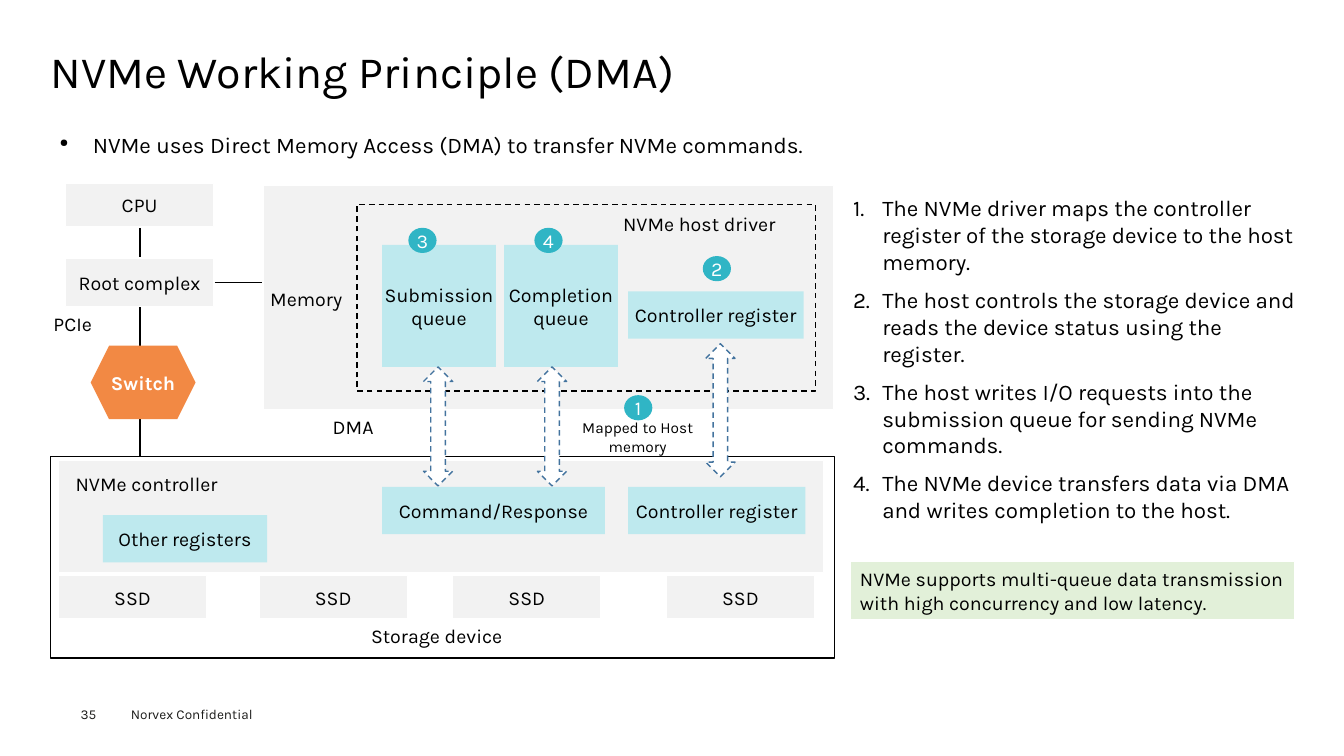
import pptx
import pptx.util
import pptx.dml.color
import pptx.enum.dml
import pptx.enum.shapes
import pptx.enum.text
import pptx.oxml.ns
from lxml import etree

Inches, Pt = pptx.util.Inches, pptx.util.Pt
Kind = pptx.enum.shapes.MSO_SHAPE
Align = pptx.enum.text.PP_ALIGN
Anchor = pptx.enum.text.MSO_ANCHOR
qn = pptx.oxml.ns.qn

COLORS = {
    "black": "000000", "white": "FFFFFF", "gray": "F2F2F2", "aqua": "BEE9EE",
    "teal": "30B5C5", "orange": "F28944", "green": "E2F0D9",
    "blue": "43739E", "ink": "1D1D1B",
}


def tint(name):
    return pptx.dml.color.RGBColor.from_string(COLORS[name])


class Board:
    """Holds the style and the current slide."""
    font = "Karla"
    size = 14

    def __init__(self, slide):
        self.shapes = slide.shapes

    def put(self, frame, lines, size=None, color="black", bold=False,
            align=Align.LEFT, anchor=Anchor.TOP, inset=(0, 0), wrap=True,
            space=None, gap=0, bullet=None, indent=0):
        frame.word_wrap = wrap
        frame.vertical_anchor = anchor
        frame.margin_left = frame.margin_right = Inches(inset[0])
        frame.margin_top = frame.margin_bottom = Inches(inset[1])
        for i, line in enumerate(lines):
            para = frame.add_paragraph() if i else frame.paragraphs[0]
            para.alignment = align
            if space:
                para.line_spacing = space
            if gap and i:
                para.space_before = Pt(gap)
            if bullet:
                self.mark(para, bullet, indent)
            run = para.add_run()
            run.text = line
            run.font.name = self.font
            run.font.size = Pt(size or self.size)
            run.font.bold = bold
            run.font.color.rgb = tint(color)

    def mark(self, para, bullet, indent):
        props = para._p.get_or_add_pPr()
        props.set("marL", str(Inches(indent)))
        props.set("indent", str(-Inches(indent)))
        if bullet == "number":
            etree.SubElement(props, qn("a:buFont"), typeface="+mj-lt")
            etree.SubElement(props, qn("a:buAutoNum"), type="arabicPeriod")
        else:
            etree.SubElement(props, qn("a:buSzPct"), val="50000")
            etree.SubElement(props, qn("a:buChar"), char=bullet)

    def label(self, x, y, w, h, *lines, **style):
        box = self.shapes.add_textbox(Inches(x), Inches(y), Inches(w), Inches(h))
        self.put(box.text_frame, lines, **style)

    def block(self, kind, x, y, w, h, *lines, fill=None, edge=None, dash=False, **style):
        shape = self.shapes.add_shape(kind, Inches(x), Inches(y), Inches(w), Inches(h))
        shape.shadow.inherit = False
        if fill:
            shape.fill.solid()
            shape.fill.fore_color.rgb = tint(fill)
        else:
            shape.fill.background()
        if edge:
            self.stroke(shape.line, edge, dash)
        else:
            shape.line.fill.background()
        if lines:
            base = dict(align=Align.CENTER, anchor=Anchor.MIDDLE, wrap=False)
            self.put(shape.text_frame, lines, **{**base, **style})

    def stroke(self, line, color, dash=False):
        line.color.rgb = tint(color)
        line.width = Pt(1)
        if dash:
            line.dash_style = pptx.enum.dml.MSO_LINE.DASH

    def line(self, x1, y1, x2, y2):
        link = self.shapes.add_connector(
            pptx.enum.shapes.MSO_CONNECTOR.STRAIGHT,
            Inches(x1), Inches(y1), Inches(x2), Inches(y2))
        self.stroke(link.line, "black")
        etree.SubElement(link._element.spPr, qn("a:effectLst"))

    def plate(self, x, y, w, h, *lines):
        self.block(Kind.RECTANGLE, x, y, w, h, *lines, fill="gray", edge="white")

    def cell(self, x, y, w, h, *lines):
        self.block(Kind.RECTANGLE, x, y, w, h, *lines, fill="aqua")


def main():
    deck = pptx.Presentation()
    deck.slide_width, deck.slide_height = Inches(13.33), Inches(7.5)
    board = Board(deck.slides.add_slide(deck.slide_layouts[6]))

    # Footer
    board.label(1.2, 6.95, 1.6, 0.27, "Norvex Confidential",
                size=9.7, color="ink", inset=(0.1, 0.05))
    board.label(0.8, 7, 0.55, 0.16, "35", size=9.7, color="ink")

    # Title and lead
    board.label(0.5, 0.49, 12.35, 0.54, "NVMe Working Principle (DMA)",
                size=32, space=0.9)
    board.label(0.5, 1.15, 12.35, 0.51,
                "NVMe uses Direct Memory Access (DMA) to transfer NVMe commands.",
                size=16, align=Align.JUSTIFY, inset=(0.09, 0.04), space=1.4,
                bullet="●", indent=0.33)

    # Steps
    board.label(
        8.37, 1.89, 4.59, 3.34,
        "The NVMe driver maps the controller register of the storage device to the host memory.",
        "The host controls the storage device and reads the device status using the register.",
        "The host writes I/O requests into the submission queue for sending NVMe commands.",
        "The NVMe device transfers data via DMA and writes completion to the host.",
        size=16, inset=(0.09, 0.04), gap=7.9, bullet="number", indent=0.29)

    # Host side
    board.block(Kind.RECTANGLE, 0.5, 4.53, 7.78, 2, edge="black")
    board.line(1.39, 2.26, 1.39, 4.53)
    board.plate(0.65, 1.82, 1.47, 0.43, "CPU")
    board.plate(0.65, 2.56, 1.47, 0.48, "Root complex")
    board.block(Kind.HEXAGON, 0.9, 3.43, 1.04, 0.73, "Switch",
                fill="orange", color="white", bold=True)
    board.label(0.53, 3.09, 0.67, 0.34, "PCIe")

    # Memory and host driver
    board.plate(2.61, 1.84, 5.66, 2.22)
    board.label(2.68, 2.85, 1.07, 0.34, "Memory")
    board.line(2.13, 2.8, 2.6, 2.8)
    for x, name in ((3.79, "Submission"), (5, "Completion")):
        board.cell(x, 2.43, 1.13, 1.21, name, "queue")
    board.cell(6.23, 2.89, 1.74, 0.47, "Controller register")
    board.block(Kind.RECTANGLE, 3.54, 2.03, 4.55, 1.85, edge="black", dash=True)
    board.label(6.18, 2.1, 2, 0.34, "NVMe host driver")

    # Storage device
    board.plate(0.58, 4.57, 7.59, 1.11)
    for x in (0.58, 2.57, 4.49, 6.61):
        board.plate(x, 5.71, 1.47, 0.43, "SSD")
    board.label(0.75, 4.68, 1.9, 0.34, "NVMe controller")
    board.cell(1.02, 5.11, 1.63, 0.47, "Other registers")
    board.cell(3.79, 4.83, 2.21, 0.47, "Command/Response")
    board.cell(6.23, 4.83, 1.76, 0.47, "Controller register")
    board.label(3.68, 6.19, 1.69, 0.34, "Storage device")

    # Transfers
    for x, y, h in ((4.2, 3.64, 1.18), (5.33, 3.64, 1.18), (7, 3.41, 1.32)):
        board.block(Kind.UP_DOWN_ARROW, x, y, 0.29, h,
                    fill="white", edge="blue", dash=True)
    board.label(3.3, 4.12, 0.74, 0.34, "DMA")
    board.label(5.73, 4.15, 1.19, 0.39, "Mapped to Host memory",
                size=11, align=Align.CENTER)

    # Step badges
    spots = ((6.19, 3.92), (6.97, 2.54), (4.05, 2.26), (5.3, 2.26))
    for step, (x, y) in enumerate(spots, 1):
        board.block(Kind.OVAL, x, y, 0.28, 0.25, str(step), fill="teal", color="white")

    # Summary
    board.block(Kind.RECTANGLE, 8.43, 5.57, 4.41, 0.58,
                "NVMe supports multi-queue data transmission with high concurrency and low latency.",
                fill="green", edge="white", align=Align.LEFT, inset=(0.1, 0.05), wrap=True)

    deck.save("out.pptx")


if __name__ == "__main__":
    main()
